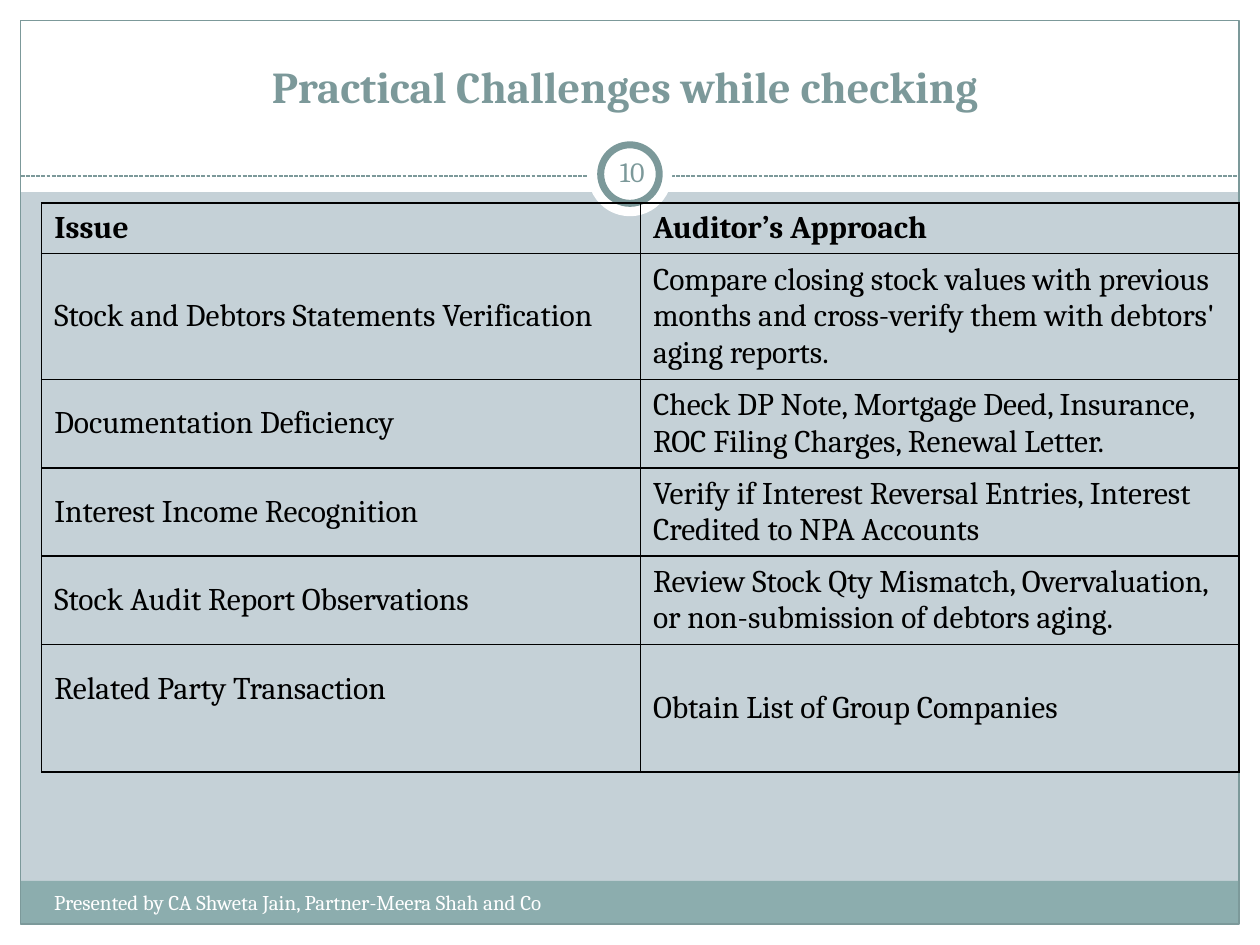
"""Build the slide on practical challenges while checking."""
from dataclasses import dataclass

from lxml.etree import SubElement
from pptx import Presentation
from pptx.dml.color import RGBColor as RGB
from pptx.enum.dml import MSO_LINE as Dash
from pptx.enum.shapes import MSO_CONNECTOR as Conn, MSO_SHAPE as Shape
from pptx.enum.text import MSO_ANCHOR as Anchor, PP_ALIGN as Align
from pptx.oxml import parse_xml
from pptx.oxml.ns import nsdecls, qn
from pptx.util import Cm, Pt


@dataclass(frozen=True)
class Theme:
    font: str = "Cambria"
    back: str = "C5D1D7"
    paper: str = "FFFFFF"
    ink: str = "000000"
    accent: str = "7C999A"
    band: str = "8CADAE"
    title: float = 25.2
    body: float = 18
    number: float = 16
    footer: float = 12
    hairline: float = 0.75
    ring: float = 4
    border: float = 1


class Deck:
    def __init__(self, theme, width, height):
        self.theme = theme
        self.prs = Presentation()
        self.prs.slide_width, self.prs.slide_height = Cm(width), Cm(height)
        self.s = self.prs.slides.add_slide(self.prs.slide_layouts[6])
        fill = self.s.background.fill
        fill.solid()
        fill.fore_color.rgb = RGB.from_string(theme.back)

    def shape(self, box, kind=Shape.RECTANGLE, fill=None, line=None, weight=0.75):
        sp = self.s.shapes.add_shape(kind, *map(Cm, box))
        sp.shadow.inherit = False
        if fill:
            sp.fill.solid()
            sp.fill.fore_color.rgb = RGB.from_string(fill)
        else:
            sp.fill.background()
        if line:
            sp.line.color.rgb = RGB.from_string(line)
            sp.line.width = Pt(weight)
        else:
            sp.line.fill.background()

    def dashed_line(self, x1, x2, y):
        cx = self.s.shapes.add_connector(Conn.STRAIGHT, Cm(x1), Cm(y), Cm(x2), Cm(y))
        cx.line.color.rgb = RGB.from_string(self.theme.accent)
        cx.line.width = Pt(self.theme.hairline)
        cx.line.dash_style = Dash.SQUARE_DOT
        SubElement(cx._element.spPr, qn("a:effectLst"))

    def run(self, tf, text, size, color, bold=False, align=Align.LEFT):
        p = tf.paragraphs[0]
        p.alignment = align
        r = p.add_run()
        r.text = text
        r.font.name, r.font.size, r.font.bold = self.theme.font, Pt(size), bold
        r.font.color.rgb = RGB.from_string(color)

    def text(self, box, text, size, color, bold=False, align=Align.LEFT,
             anchor=Anchor.TOP, insets=(0.25, 0.13, 0.25, 0.13)):
        tf = self.s.shapes.add_textbox(*map(Cm, box)).text_frame
        tf.word_wrap, tf.vertical_anchor = True, anchor
        tf.margin_left, tf.margin_top, tf.margin_right, tf.margin_bottom = map(Cm, insets)
        self.run(tf, text, size, color, bold, align)

    def border(self, cell):
        tc_pr = cell._tc.get_or_add_tcPr()
        for i, side in enumerate("LRTB"):
            tc_pr.insert(i, parse_xml(
                f'<a:ln{side} {nsdecls("a")} w="{Pt(self.theme.border)}"><a:solidFill>'
                f'<a:srgbClr val="{self.theme.ink}"/></a:solidFill></a:ln{side}>'))

    def table(self, left, top, widths, heights, rows):
        box = map(Cm, (left, top, sum(widths), sum(heights)))
        table = self.s.shapes.add_table(len(rows), len(widths), *box).table
        table.first_row = table.horz_banding = False
        for column, width in zip(table.columns, widths):
            column.width = Cm(width)
        for i, (height, texts) in enumerate(zip(heights, rows)):
            table.rows[i].height = Cm(height)
            for j, text in enumerate(texts):
                cell = table.cell(i, j)
                cell.fill.background()
                cell.vertical_anchor = Anchor.MIDDLE
                self.border(cell)
                self.run(cell.text_frame, text, self.theme.body, self.theme.ink, bold=i == 0)
        return table


ROWS = [
    ("Issue", "Auditor’s Approach"),
    ("Stock and Debtors Statements Verification",
     "Compare closing stock values with previous months and cross-verify them "
     "with debtors' aging reports."),
    ("Documentation Deficiency",
     "Check DP Note, Mortgage Deed, Insurance, ROC Filing Charges, Renewal Letter."),
    ("Interest Income Recognition",
     "Verify if Interest Reversal Entries, Interest Credited to NPA Accounts"),
    ("Stock Audit Report Observations",
     "Review Stock Qty Mismatch, Overvaluation, or non-submission of debtors aging."),
    ("Related Party Transaction", "Obtain List of Group Companies"),
]


def main():
    t = Theme()
    width, height, edge = 25.4, 19.05, 0.42
    inner = width - 2 * edge
    deck = Deck(t, width, height)

    for box in ((0, height - edge, width, edge), (0, 0, width, 3.87),
                (0, 0, edge, height), (width - edge, 0, edge, height)):
        deck.shape(box, fill=t.paper)
    deck.shape((edge, 17.76, inner, 0.87), fill=t.band)
    deck.shape((edge, edge, inner, height - 2 * edge), line=t.accent, weight=t.hairline)
    deck.dashed_line(edge, width - edge, 3.55)
    deck.shape((11.85, 2.66, 1.7, 1.7), Shape.OVAL, fill=t.paper)
    deck.shape((12.11, 2.92, 1.18, 1.18), Shape.OVAL, t.paper, t.accent, t.ring)

    deck.text((0.83, 1.27, 23.54, 2.11), "Practical Challenges while checking", t.title,
              t.accent, True, Align.CENTER, Anchor.BOTTOM, (0.25, 0, 0.25, 1.17))
    deck.text((0.84, 17.81, 13.34, 1.02),
              "Presented by CA Shweta Jain, Partner-Meera Shah and Co", t.footer, t.paper)
    deck.text((12.11, 2.85, 1.27, 1.22), "10", t.number, t.accent,
              align=Align.CENTER, anchor=Anchor.MIDDLE, insets=[0.13] * 4)

    table = deck.table(0.84, 4.09, [12.07] * 2, [1.02] + [1.78] * 4 + [2.57], ROWS)
    table.cell(len(ROWS) - 1, 0).margin_bottom = Cm(0.9)
    deck.prs.save("out.pptx")


if __name__ == "__main__":
    main()
